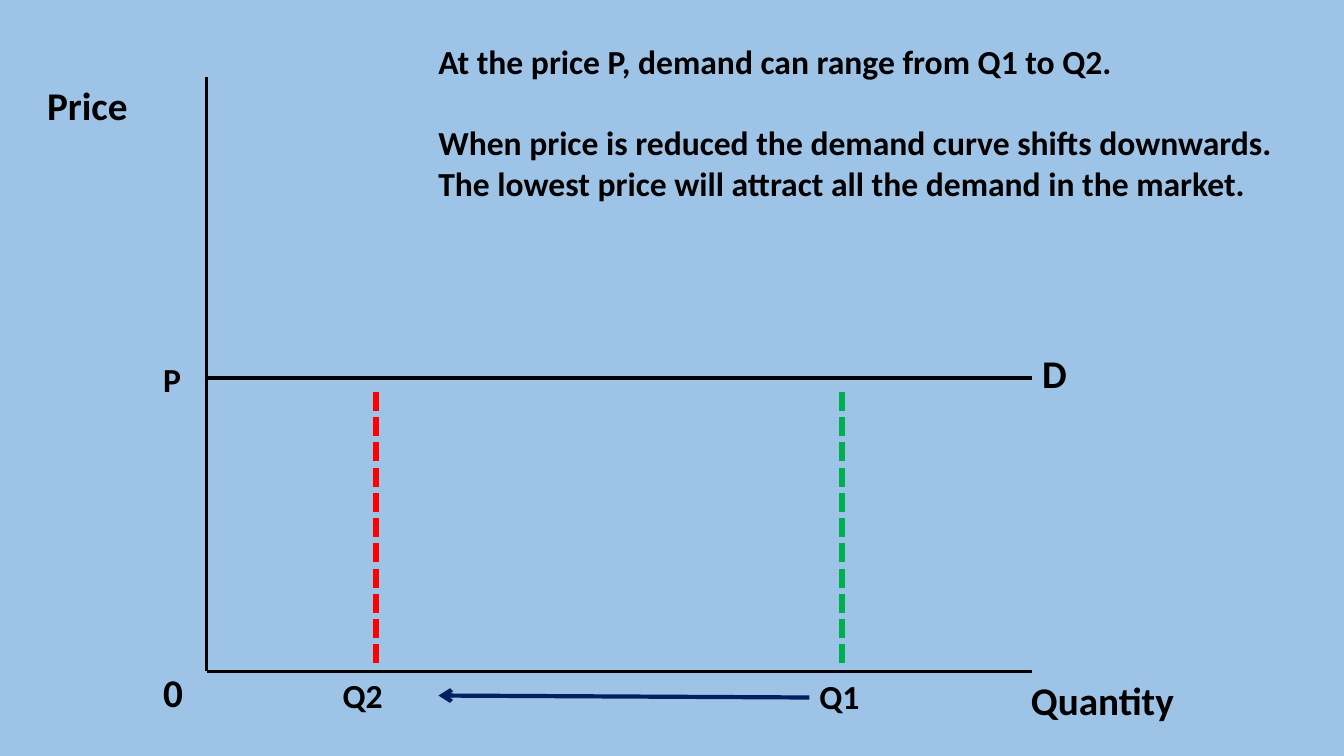
from dataclasses import dataclass

from lxml.etree import SubElement
from pptx import Presentation
from pptx.dml.color import RGBColor
from pptx.enum.dml import MSO_LINE_DASH_STYLE as DASH
from pptx.enum.shapes import MSO_CONNECTOR as CONNECTOR
from pptx.enum.text import MSO_AUTO_SIZE as AUTO_SIZE
from pptx.oxml.ns import qn
from pptx.slide import Slide
from pptx.util import Emu, Pt

EMU_PER_PX = 9144
BLACK, RED, GREEN, NAVY, SKY = "000000", "FF0000", "00B050", "002060", "9DC3E6"
AXIS_X, AXIS_Y, AXIS_TOP, AXIS_RIGHT = 205, 666, 76, 1024
PRICE_Y, DROP_TOP, DROP_BOTTOM = 375, 383, 658
Q2_X, Q1_X = 373, 835


@dataclass(frozen=True)
class Label:
    """A text box with its place, paragraphs and size in points."""

    left: int
    top: int
    width: int
    height: int
    paragraphs: tuple[str, ...]
    size: int = 28


@dataclass(frozen=True)
class Line:
    """A straight line from one point to another."""

    x1: int
    y1: int
    x2: int
    y2: int
    color: str = BLACK
    weight: float = 2.5
    dashed: bool = False
    arrow: bool = False


LINES = (
    Line(AXIS_X, AXIS_TOP, AXIS_X, AXIS_Y),
    Line(AXIS_RIGHT, AXIS_Y, AXIS_X, AXIS_Y),
    Line(AXIS_X, PRICE_Y, AXIS_RIGHT, PRICE_Y, weight=3),
    Line(Q2_X, DROP_BOTTOM, Q2_X, DROP_TOP, RED, 4.5, dashed=True),
    Line(Q1_X, DROP_BOTTOM, Q1_X, DROP_TOP, GREEN, 4.5, dashed=True),
    Line(803, 692, 435, 690, NAVY, 3, arrow=True),
)

LABELS = (
    Label(37, 76, 157, 57, ("Price",)),
    Label(1013, 666, 294, 57, ("Quantity",)),
    Label(152, 658, 42, 57, ("0",)),
    Label(1024, 342, 63, 57, ("D",)),
    Label(152, 351, 52, 50, ("P",), 24),
    Label(803, 666, 84, 50, ("Q1",), 24),
    Label(330, 665, 105, 50, ("Q2",), 24),
    Label(425, 36, 871, 172, (
        "At the price P, demand can range from Q1 to Q2.",
        "When price is reduced the demand curve shifts downwards. "
        "The lowest price will attract all the demand in the market.",
    ), 24),
)


def px(n: int) -> Emu:
    """Turn pixels into EMU."""
    return Emu(n * EMU_PER_PX)


def rgb(color: str) -> RGBColor:
    """Turn a hex string into a colour."""
    return RGBColor.from_string(color)


def add_text(p, text: str, *, size: int, color: str = BLACK,
             bold: bool = True, font: str = "Calibri") -> None:
    """Add a formatted run to a paragraph."""
    r = p.add_run()
    r.text = text
    r.font.name, r.font.size, r.font.bold = font, Pt(size), bold
    r.font.color.rgb = rgb(color)


def draw_label(s: Slide, label: Label) -> None:
    """Draw a text box, with one line of space between paragraphs."""
    sp = s.shapes.add_textbox(px(label.left), px(label.top),
                              px(label.width), px(label.height))
    tf = sp.text_frame
    tf.word_wrap = True
    tf.auto_size = AUTO_SIZE.SHAPE_TO_FIT_TEXT
    for i, text in enumerate(label.paragraphs):
        p = tf.add_paragraph() if i else tf.paragraphs[0]
        if i:
            p.space_before = Pt(29)
        add_text(p, text, size=label.size)


def draw_line(s: Slide, line: Line) -> None:
    """Draw a connector without shadow."""
    sp = s.shapes.add_connector(CONNECTOR.STRAIGHT, px(line.x1), px(line.y1),
                                px(line.x2), px(line.y2))
    sp.line.color.rgb = rgb(line.color)
    sp.line.width = Pt(line.weight)
    if line.dashed:
        sp.line.dash_style = DASH.SQUARE_DOT
    if line.arrow:
        SubElement(sp.line._get_or_add_ln(), qn("a:tailEnd"), type="arrow")
    SubElement(sp._element.spPr, qn("a:effectLst"))


def main() -> None:
    """Build the demand curve slide."""
    prs = Presentation()
    prs.slide_width, prs.slide_height = Emu(12192000), Emu(6858000)
    s = prs.slides.add_slide(prs.slide_layouts[6])
    s.background.fill.solid()
    s.background.fill.fore_color.rgb = rgb(SKY)
    for line in LINES:
        draw_line(s, line)
    for label in LABELS:
        draw_label(s, label)
    prs.save("out.pptx")


if __name__ == "__main__":
    main()
